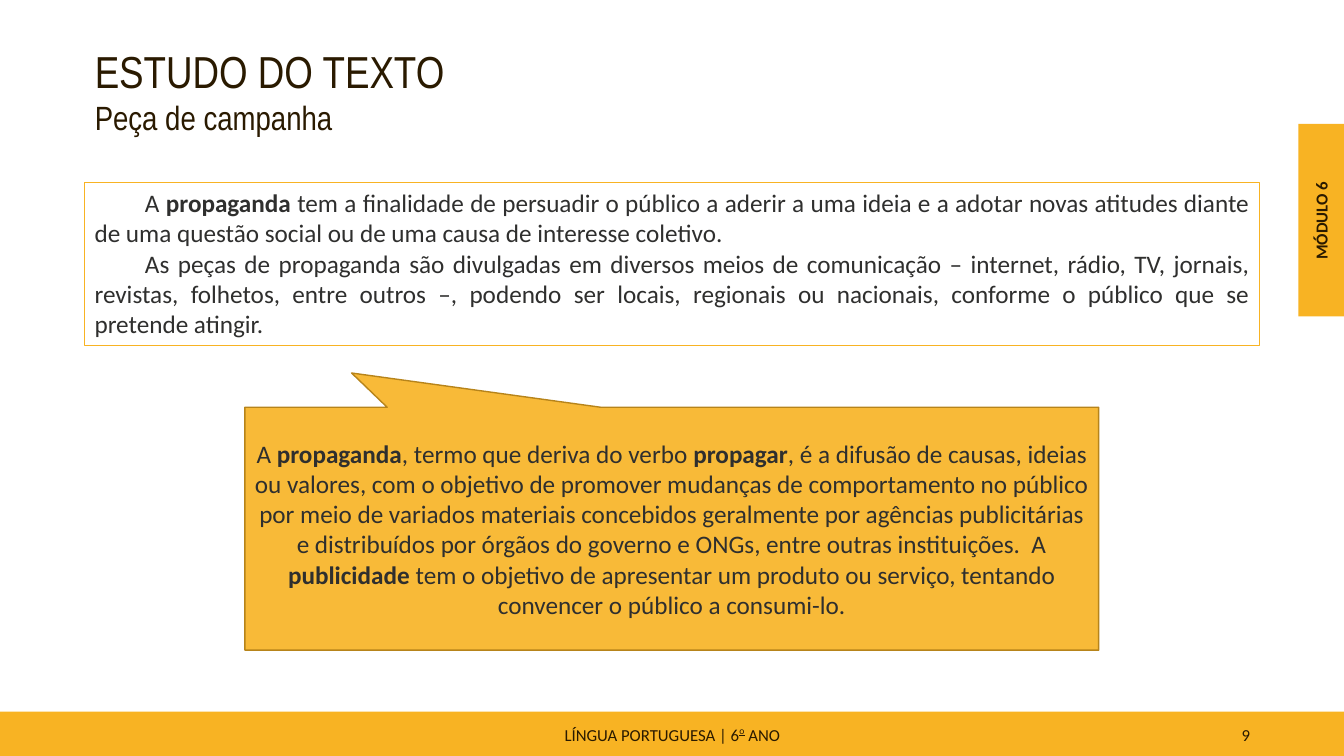
from pptx import Presentation
from pptx.dml.color import RGBColor
from pptx.enum.shapes import MSO_SHAPE
from pptx.enum.text import MSO_ANCHOR, MSO_AUTO_SIZE, PP_ALIGN
from pptx.oxml.ns import qn
from pptx.util import Pt
from lxml import etree

RECT, CALLOUT = MSO_SHAPE.RECTANGLE, MSO_SHAPE.RECTANGULAR_CALLOUT
TOP, MIDDLE = MSO_ANCHOR.TOP, MSO_ANCHOR.MIDDLE
LEFT, CENTER = PP_ALIGN.LEFT, PP_ALIGN.CENTER
RIGHT, JUSTIFY = PP_ALIGN.RIGHT, PP_ALIGN.JUSTIFY
NO_AUTOSIZE = MSO_AUTO_SIZE.NONE

YELLOW, OCHRE = "F8B323", "B7841A"
BROWN, GRAY = "2A1A00", "2F2F2E"
SLIDE_W, SLIDE_H = 960, 540
MARGIN, CONTENT_W = 60.48, 839.52

# Bold words stand between asterisks
PROPAGANDA = [
    "A *propaganda* tem a finalidade de persuadir o público a aderir a uma "
    "ideia e a adotar novas atitudes diante de uma questão social ou de uma "
    "causa de interesse coletivo.",
    "As peças de propaganda são divulgadas em diversos meios de comunicação – "
    "internet, rádio, TV, jornais, revistas, folhetos, entre outros –, podendo "
    "ser locais, regionais ou nacionais, conforme o público que se pretende "
    "atingir.",
]
DEFINITION = [
    "A *propaganda*, termo que deriva do verbo *propagar*, é a difusão de "
    "causas, ideias ou valores, com o objetivo de promover mudanças de "
    "comportamento no público por meio de variados materiais concebidos "
    "geralmente por agências publicitárias e distribuídos por órgãos do "
    "governo e ONGs, entre outras instituições.  A *publicidade* tem o "
    "objetivo de apresentar um produto ou serviço, tentando convencer o "
    "público a consumi-lo.",
]


def rgb(color):
    return RGBColor.from_string(color)


def format_run(r, size, color, font="Calibri", bold=False):
    r.font.size, r.font.name, r.font.bold = Pt(size), font, bold
    r.font.color.rgb = rgb(color)


def add_panel(s, kind, box, fill=None, line=None, line_width=1):
    sp = s.shapes.add_shape(kind, *map(Pt, box))
    sp.shadow.inherit = False
    if fill:
        sp.fill.solid()
        sp.fill.fore_color.rgb = rgb(fill)
    else:
        sp.fill.background()
    if line:
        sp.line.color.rgb = rgb(line)
        sp.line.width = Pt(line_width)
    else:
        sp.line.fill.background()
    return sp


def set_opacity(sp, percent):
    color = sp.fill._xPr.find(qn("a:solidFill"))[0]
    etree.SubElement(color, qn("a:alpha")).set("val", str(percent * 1000))


def write(sp, paragraphs, size, color, align, anchor=MIDDLE, indent=0):
    """Fill a shape with paragraphs whose bold parts stand between asterisks."""
    tf = sp.text_frame
    tf.word_wrap, tf.vertical_anchor = True, anchor
    for i, text in enumerate(paragraphs):
        p = tf.add_paragraph() if i else tf.paragraphs[0]
        p.alignment = align
        if indent:
            p._p.get_or_add_pPr().set("indent", str(Pt(indent)))
        for j, part in enumerate(text.split("*")):
            if part:
                r = p.add_run()
                r.text = part
                format_run(r, size, color, bold=j % 2 == 1)


def add_label(s, box, text, align, anchor=MIDDLE):
    sp = s.shapes.add_textbox(*map(Pt, box))
    write(sp, [text], 12, BROWN, align, anchor)
    return sp


def add_footer(s):
    add_panel(s, RECT, (0, 508.3, SLIDE_W, 32.4), YELLOW)
    course = add_label(s, (318.24, 511.2, 324, 27.36),
                       "LÍNGUA PORTUGUESA | 6", CENTER)
    p = course.text_frame.paragraphs[0]
    for text in ("o", " ANO"):
        r = p.add_run()
        r.text = text
        format_run(r, 12, BROWN)
    ordinal = p.runs[1]
    ordinal.font.underline = True
    ordinal._r.get_or_add_rPr().set("baseline", "45000")
    add_label(s, (678.24, 511.2, 221.76, 27.36), "9", RIGHT)


def add_module_tab(s):
    add_panel(s, RECT, (927.36, 88.56, 32.64, 137.52), YELLOW)
    label = add_label(s, (874.8, 146.88, 137.52, 21.6), "*MÓDULO 6*",
                      CENTER, TOP)
    label.rotation = 270


def add_title(s):
    title = s.shapes.title
    title.left, title.top = Pt(MARGIN), Pt(27.36)
    title.width, title.height = Pt(345.6), Pt(74.88)
    tf = title.text_frame
    tf.text = "ESTUDO DO TEXTO\nPeça de campanha"
    tf.word_wrap, tf.vertical_anchor = True, TOP
    tf.auto_size = NO_AUTOSIZE
    for p, size in zip(tf.paragraphs, (32, 24)):
        p.alignment = LEFT
        format_run(p.runs[0], size, BROWN, "Arial Narrow")


def main():
    prs = Presentation()
    prs.slide_width, prs.slide_height = Pt(SLIDE_W), Pt(SLIDE_H)
    s = prs.slides.add_slide(prs.slide_layouts[5])

    # Frame of the slide
    add_footer(s)
    add_module_tab(s)
    add_title(s)

    # Main text
    frame = add_panel(s, RECT, (MARGIN, 130.32, CONTENT_W, 116.64),
                      line=YELLOW, line_width=0.75)
    write(frame, PROPAGANDA, 18, GRAY, JUSTIFY, TOP, indent=36)

    # Callout with the definition
    callout = add_panel(s, CALLOUT, (174.96, 290.88, 609.84, 173.52),
                        YELLOW, OCHRE)
    callout.adjustments[0], callout.adjustments[1] = -0.375, -0.641
    set_opacity(callout, 90)
    write(callout, DEFINITION, 18, GRAY, CENTER)

    prs.save("out.pptx")


if __name__ == "__main__":
    main()
